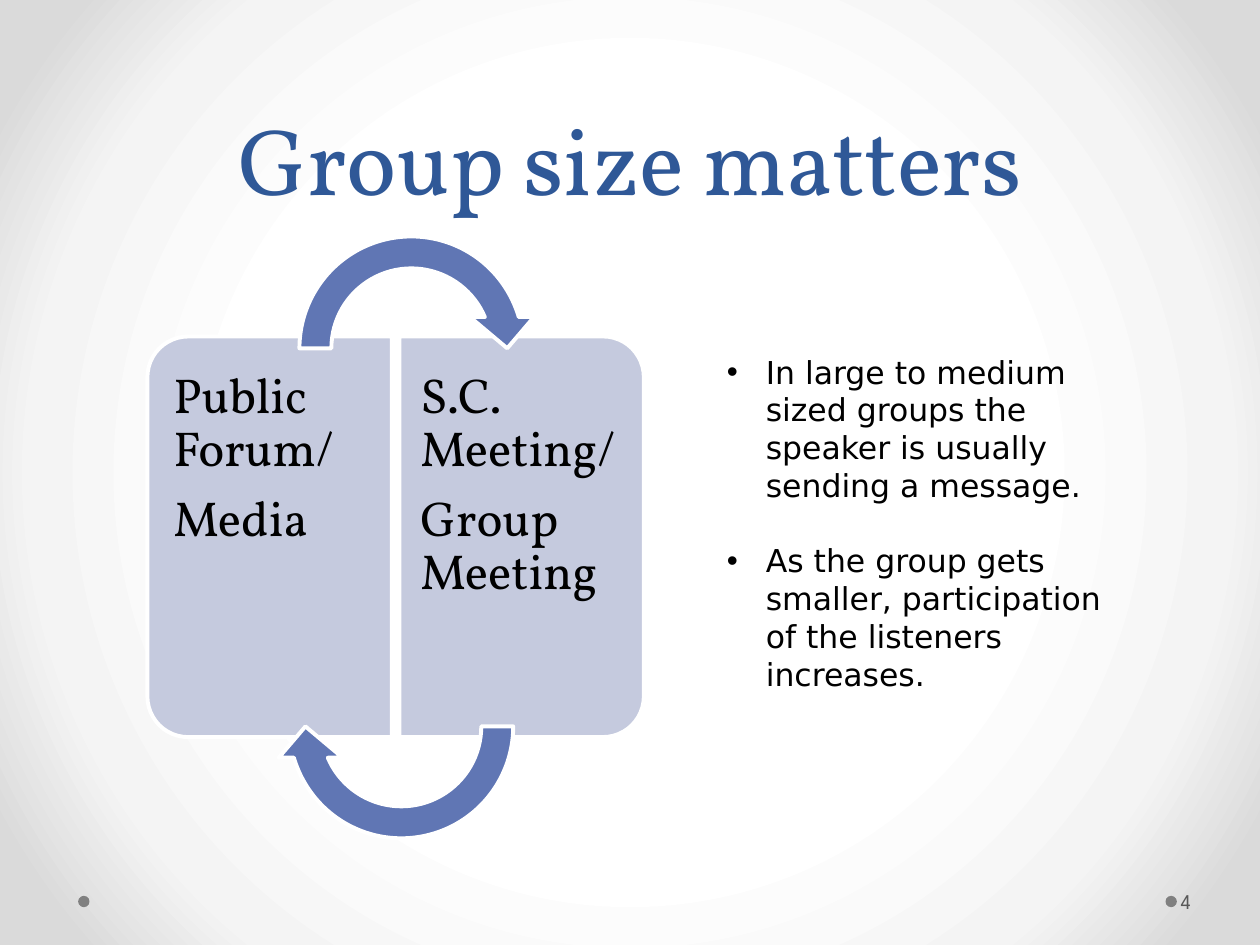
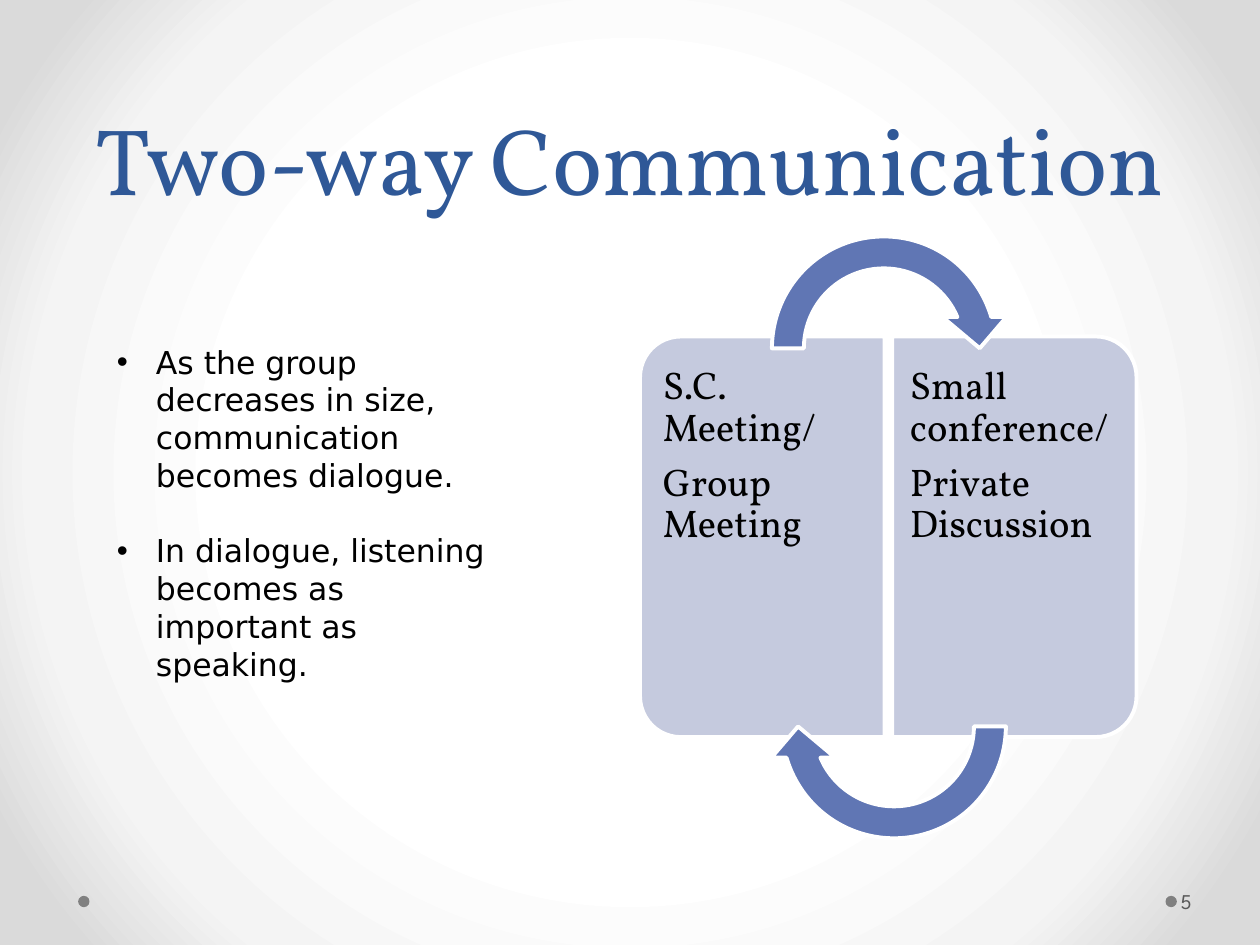
"""Build two slides on how group size shapes communication."""
from dataclasses import dataclass

from lxml.etree import SubElement
from pptx import Presentation
from pptx.dml.color import RGBColor
from pptx.enum.shapes import MSO_SHAPE
from pptx.enum.text import MSO_ANCHOR, PP_ALIGN
from pptx.oxml import parse_xml
from pptx.oxml.ns import nsdecls, qn
from pptx.shapes.autoshape import Shape
from pptx.slide import Slide
from pptx.text.text import TextFrame
from pptx.util import Inches, Pt

SERIF, SANS, NUMERAL = "Vollkorn", "DejaVu Sans", "League Spartan"
TITLE, BLACK, WHITE = "2F5897", "000000", "FFFFFF"
PANEL, ARROW, DOT, NUMBER = "C5CADE", "6076B4", "808080", "595959"
BACKGROUND = ((50, "FFFFFF"), (76, "F4F4F4"), (92, "DADADA"))

PANEL_W, PANEL_H, PANEL_PITCH, PANEL_MID = 1.94, 3.18, 2.0, 4.26
TEXT_TOP, TEXT_W, TEXT_H = 2.76, 1.85, 2.99
ARROW_SIZE, ARROW_TOP, ARROW_BOTTOM = 2.03, 1.75, 4.75
DOT_SIZE, DOT_TOP, DOT_LEFTS = 0.09, 7.11, (0.62, 9.25)


@dataclass(frozen=True)
class Box:
    """A rectangle in inches."""
    x: float
    y: float
    w: float
    h: float

    def lengths(self) -> tuple[Inches, ...]:
        """Return left, top, width and height."""
        return tuple(Inches(v) for v in (self.x, self.y, self.w, self.h))


@dataclass(frozen=True)
class TextStyle:
    """Font, size in points and colour of a text."""
    font: str
    size: float
    color: str


@dataclass(frozen=True)
class Cycle:
    """Two panels joined by circular arrows."""
    center: float
    size: float
    left: tuple[str, ...]
    right: tuple[str, ...]
    upper_arrow: float
    lower_arrow: float


@dataclass(frozen=True)
class Page:
    """The content of one slide."""
    number: int
    title: str
    cycle: Cycle
    bullets: tuple[str, ...]
    bullet_box: Box


PAGES = (
    Page(4, "Group size matters",
         Cycle(2.14, 28, ("Public Forum/", "Media"),
               ("S.C. Meeting/", "Group Meeting"), 2.25, 2.17),
         ("In large to medium sized groups the speaker is usually sending a message.",
          "As the group gets smaller, participation of the listeners increases."),
         Box(5.67, 2.75, 3.17, 2.83)),
    Page(5, "Two-way Communication",
         Cycle(6.05, 22, ("S.C. Meeting/", "Group Meeting"),
               ("Small conference/", "Private Discussion"), 6.0, 6.08),
         ("As the group decreases in size, communication becomes dialogue.",
          "In dialogue, listening becomes as important as speaking."),
         Box(0.83, 2.67, 3.17, 2.83)),
)


def rgb(color: str) -> RGBColor:
    """Turn a hex string into a colour."""
    return RGBColor.from_string(color)


def set_background(prs: Presentation) -> None:
    """Give the slide master a circular gradient."""
    prs.slide_master.background.fill.gradient()
    stops = "".join(f'<a:gs pos="{pos * 1000}"><a:srgbClr val="{color}"/></a:gs>'
                    for pos, color in BACKGROUND)
    grad = parse_xml(
        f'<a:gradFill {nsdecls("a")} rotWithShape="1"><a:gsLst>{stops}</a:gsLst>'
        '<a:path path="circle"><a:fillToRect l="50000" t="50000" r="50000" b="50000"/>'
        '</a:path></a:gradFill>')
    old = next(prs.slide_master.element.iter(qn("a:gradFill")))
    old.getparent().replace(old, grad)


def add_shape(s: Slide, kind: MSO_SHAPE, box: Box, fill: str,
              line: str | None = None, rotation: float = 0) -> Shape:
    """Draw a filled preset shape, outlined if a line colour is given."""
    sp = s.shapes.add_shape(kind, *box.lengths())
    sp.shadow.inherit = False
    sp.rotation = rotation
    sp.fill.solid()
    sp.fill.fore_color.rgb = rgb(fill)
    if line:
        sp.line.color.rgb = rgb(line)
        sp.line.width = Pt(2.25)
    else:
        sp.line.fill.background()
    return sp


def add_text(s: Slide, box: Box, lines: tuple[str, ...], style: TextStyle,
             insets: tuple[float, ...] = (0.1, 0.05, 0.1, 0.05)) -> TextFrame:
    """Add a text box with one paragraph for each line."""
    tf = s.shapes.add_textbox(*box.lengths()).text_frame
    tf.word_wrap = True
    tf.margin_left, tf.margin_top, tf.margin_right, tf.margin_bottom = map(Inches, insets)
    tf.text = "\n".join(lines)
    for p in tf.paragraphs:
        for r in p.runs:
            r.font.name = style.font
            r.font.size = Pt(style.size)
            r.font.color.rgb = rgb(style.color)
    return tf


def add_frame(s: Slide, page: Page) -> None:
    """Add the dots, title and slide number."""
    for x in DOT_LEFTS:
        add_shape(s, MSO_SHAPE.OVAL, Box(x, DOT_TOP, DOT_SIZE, DOT_SIZE), DOT)
    tf = add_text(s, Box(0.5, 0.33, 9, 1.42), (page.title,), TextStyle(SERIF, 54, TITLE))
    tf.vertical_anchor = MSO_ANCHOR.BOTTOM
    p = tf.paragraphs[0]
    p.alignment = PP_ALIGN.CENTER
    p.line_spacing = Pt(58)
    tf = add_text(s, Box(9.34, 6.95, 0.61, 0.4), (str(page.number),),
                  TextStyle(NUMERAL, 12, NUMBER), (0.03, 0.05, 0.05, 0.05))
    tf.vertical_anchor = MSO_ANCHOR.MIDDLE


def add_cycle(s: Slide, cycle: Cycle) -> None:
    """Draw both panels with their text, then the arrows."""
    outer = cycle.size / 240
    inner, vertical = outer + 0.05, outer * 1.6
    panels = ((cycle.left, 270, -0.88, outer, inner),
              (cycle.right, 90, -0.97, inner, outer))
    for i, (lines, rotation, offset, left, right) in enumerate(panels):
        center = cycle.center + i * PANEL_PITCH
        box = Box(center - PANEL_H / 2, PANEL_MID - PANEL_W / 2, PANEL_H, PANEL_W)
        add_shape(s, MSO_SHAPE.ROUND_2_SAME_RECTANGLE, box, PANEL, WHITE, rotation)
        tf = add_text(s, Box(center + offset, TEXT_TOP, TEXT_W, TEXT_H), lines,
                      TextStyle(SERIF, cycle.size, BLACK), (left, vertical, right, vertical))
        for p in tf.paragraphs:
            p.line_spacing = 0.9
            p.space_after = Pt(cycle.size * 0.35)
    for x, y, rotation in ((cycle.upper_arrow, ARROW_TOP, 0),
                           (cycle.lower_arrow, ARROW_BOTTOM, 180)):
        add_shape(s, MSO_SHAPE.CIRCULAR_ARROW, Box(x, y, ARROW_SIZE, ARROW_SIZE),
                  ARROW, WHITE, rotation)


def add_bullets(s: Slide, page: Page) -> None:
    """Add the bulleted remarks beside the cycle."""
    tf = add_text(s, page.bullet_box, page.bullets, TextStyle(SANS, 18, BLACK))
    for i, p in enumerate(tf.paragraphs):
        if i:
            p.space_before = Pt(21.5)
        pPr = p._p.get_or_add_pPr()
        pPr.set("marL", str(Inches(0.31)))
        pPr.set("indent", str(Inches(-0.31)))
        SubElement(pPr, qn("a:buFont"), typeface="Arial")
        SubElement(pPr, qn("a:buChar"), char="•")


def main() -> None:
    """Build and save the presentation."""
    prs = Presentation()
    prs.slide_width, prs.slide_height = Inches(10), Inches(7.5)
    set_background(prs)
    for page in PAGES:
        s = prs.slides.add_slide(prs.slide_layouts[6])
        add_frame(s, page)
        add_cycle(s, page.cycle)
        add_bullets(s, page)
    prs.save("out.pptx")


if __name__ == "__main__":
    main()
